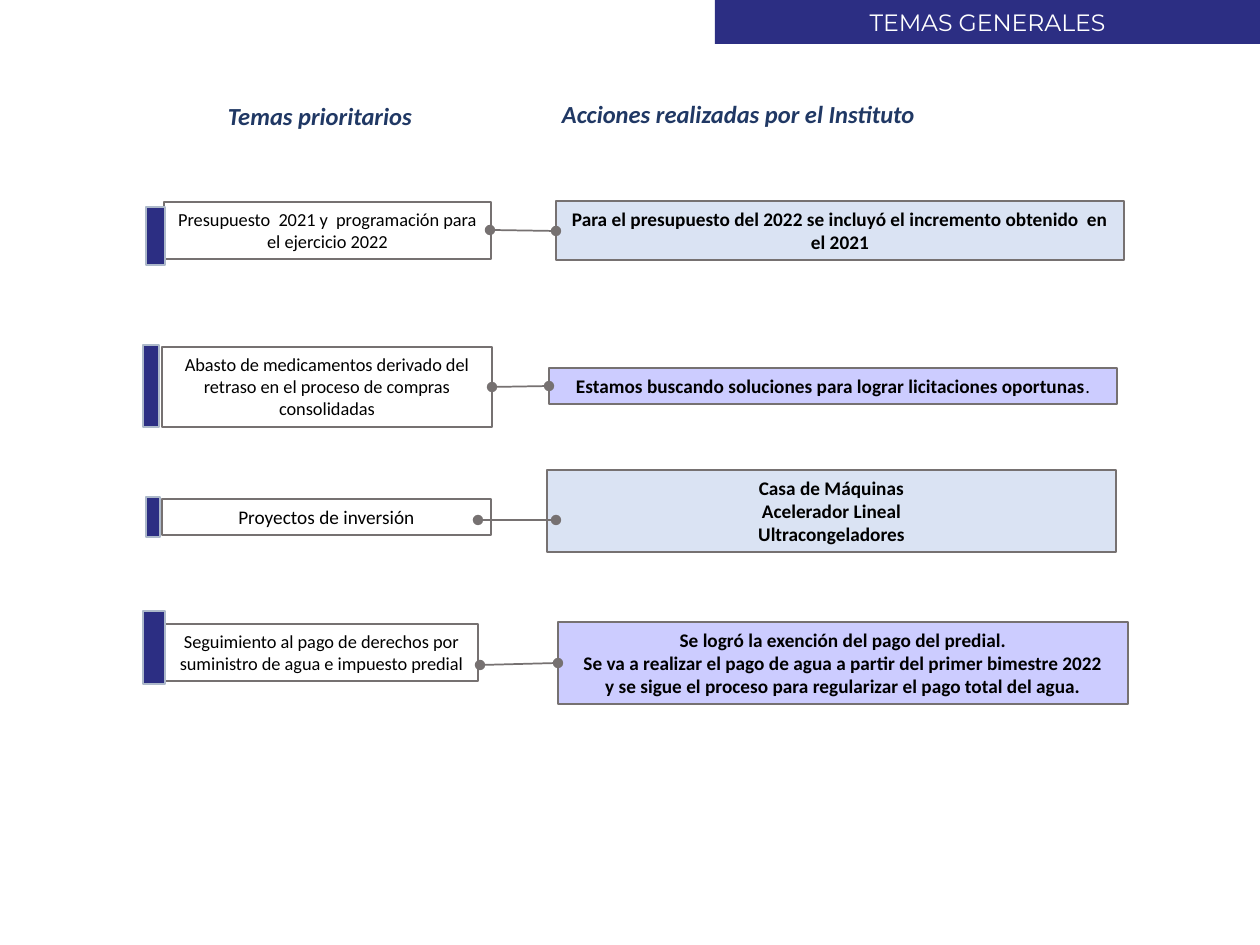
from typing import NamedTuple

from lxml import etree
from pptx import Presentation
from pptx.dml.color import RGBColor
from pptx.enum.shapes import MSO_CONNECTOR, MSO_SHAPE
from pptx.enum.text import MSO_ANCHOR, PP_ALIGN
from pptx.oxml.ns import qn
from pptx.util import Pt

EMU_PER_PX = 914400 / 126
RECTANGLE = MSO_SHAPE.RECTANGLE
ROUNDED = MSO_SHAPE.ROUNDED_RECTANGLE
STRAIGHT = MSO_CONNECTOR.STRAIGHT
CENTER = PP_ALIGN.CENTER
TOP, MIDDLE = MSO_ANCHOR.TOP, MSO_ANCHOR.MIDDLE

NAVY, TITLE_BLUE, BAR_EDGE = "2C2E83", "203864", "ADB9CA"
GRAY, WHITE, BLACK = "767171", "FFFFFF", "000000"
PALE_BLUE, LILAC = "DAE3F3", "CCCCFF"


class Area(NamedTuple):
    left: int
    top: int
    width: int
    height: int


class Link(NamedTuple):
    x1: int
    y1: int
    x2: int
    y2: int


class Heading(NamedTuple):
    area: Area
    text: str


class Row(NamedTuple):
    topic: str
    topic_size: float
    topic_area: Area
    actions: list[str]
    action_area: Area
    action_fill: str
    bar: Area
    link: Link
    ending: str = ""


HEADINGS = [
    Heading(Area(165, 95, 310, 43), "Temas prioritarios"),
    Heading(Area(547, 93, 383, 43), "Acciones realizadas por el Instituto"),
]

ROWS = [
    Row("Presupuesto  2021 y  programación para el ejercicio 2022", 10.5,
        Area(164, 202, 327, 57),
        ["Para el presupuesto del 2022 se incluyó el incremento obtenido  en el 2021"],
        Area(556, 201, 568, 59), PALE_BLUE,
        Area(146, 207, 19, 58), Link(490, 230, 556, 231)),
    Row("Abasto de medicamentos derivado del retraso en el proceso de compras consolidadas",
        10.5, Area(162, 347, 330, 80),
        ["Estamos buscando soluciones para lograr licitaciones oportunas"],
        Area(549, 368, 568, 36), LILAC,
        Area(143, 345, 16, 82), Link(492, 387, 549, 386), ending="."),
    Row("Proyectos de inversión", 11, Area(162, 499, 329, 36),
        ["Casa de Máquinas", "Acelerador Lineal", "Ultracongeladores"],
        Area(547, 470, 569, 82), PALE_BLUE,
        Area(146, 497, 14, 40), Link(478, 520, 556, 520)),
    Row("Seguimiento al pago de derechos por suministro de agua e impuesto predial", 10.5,
        Area(165, 624, 313, 57),
        ["Se logró la exención del pago del predial.",
         "Se va a realizar el pago de agua a partir del primer bimestre 2022",
         "y se sigue el proceso para regularizar el pago total del agua."],
        Area(558, 622, 570, 82), LILAC,
        Area(143, 611, 22, 73), Link(480, 665, 558, 663)),
]


def px(length: int) -> int:
    return round(length * EMU_PER_PX)


def color(value: str) -> RGBColor:
    return RGBColor.from_string(value)


def add_text(para, text: str, *, size: float, hue: str = BLACK, font: str = "Calibri",
             bold: bool = False, italic: bool = False) -> None:
    para.alignment = CENTER
    span = para.add_run()
    span.text = text
    span.font.name = font
    span.font.size = Pt(size)
    span.font.bold = bold
    span.font.italic = italic
    span.font.color.rgb = color(hue)


def add_box(page, area: Area, fill: str, edge: str | None = None,
            kind=RECTANGLE, anchor=TOP):
    box = page.shapes.add_shape(kind, *map(px, area))
    box.shadow.inherit = False
    box.fill.solid()
    box.fill.fore_color.rgb = color(fill)
    if edge:
        box.line.color.rgb = color(edge)
        box.line.width = Pt(1)
    else:
        box.line.fill.background()
    if kind == ROUNDED:
        box.adjustments[0] = 0
    box.text_frame.word_wrap = True
    box.text_frame.vertical_anchor = anchor
    return box


def add_link(page, link: Link) -> None:
    """Draw a line with a round dot at each end."""
    line = page.shapes.add_connector(STRAIGHT, *map(px, link))
    line.line.color.rgb = color(GRAY)
    line.line.width = Pt(1)
    outline = line.line._get_or_add_ln()
    for end in ("a:headEnd", "a:tailEnd"):
        etree.SubElement(outline, qn(end), type="oval")
    etree.SubElement(line._element.spPr, qn("a:effectLst"))


def add_heading(page, heading: Heading) -> None:
    box = page.shapes.add_textbox(*map(px, heading.area))
    box.text_frame.word_wrap = True
    add_text(box.text_frame.paragraphs[0], heading.text, size=14, hue=TITLE_BLUE,
             bold=True, italic=True)


def add_row(page, row: Row) -> None:
    topic = add_box(page, row.topic_area, WHITE, GRAY, ROUNDED)
    add_text(topic.text_frame.paragraphs[0], row.topic, size=row.topic_size)

    frame = add_box(page, row.action_area, row.action_fill, GRAY, ROUNDED).text_frame
    for index, action in enumerate(row.actions):
        para = frame.add_paragraph() if index else frame.paragraphs[0]
        add_text(para, action, size=11, bold=True)
    if row.ending:
        add_text(para, row.ending, size=10.5)

    add_box(page, row.bar, NAVY, BAR_EDGE)
    add_link(page, row.link)


def main() -> None:
    deck = Presentation()
    deck.slide_width, deck.slide_height = px(1260), px(945)
    page = deck.slides.add_slide(deck.slide_layouts[6])

    for heading in HEADINGS:
        add_heading(page, heading)
    for row in ROWS:
        add_row(page, row)

    banner = add_box(page, Area(715, 0, 545, 44), NAVY, anchor=MIDDLE)
    add_text(banner.text_frame.paragraphs[0], "TEMAS GENERALES", size=13.5,
             hue=WHITE, font="Montserrat")

    deck.save("out.pptx")


if __name__ == "__main__":
    main()
